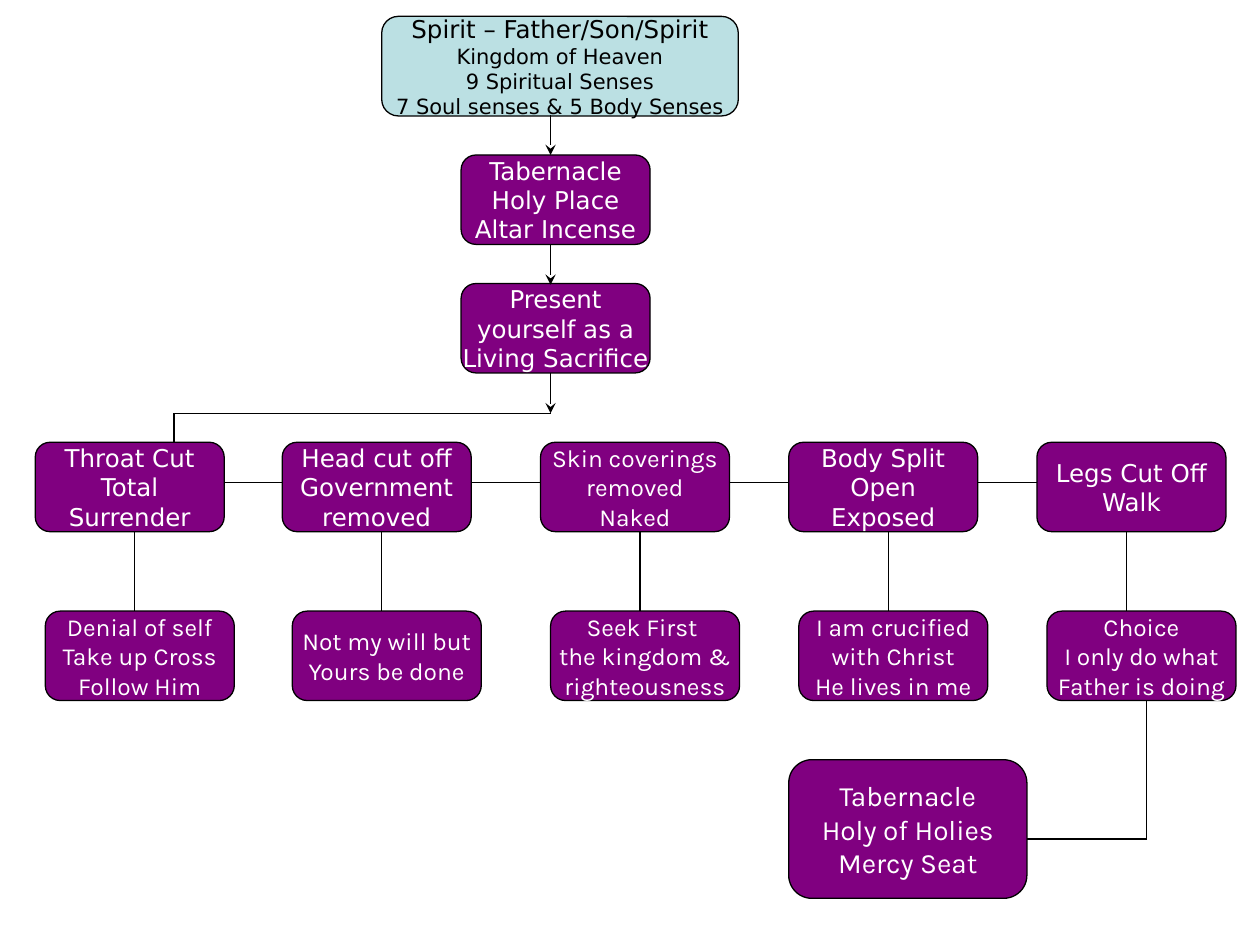
from dataclasses import dataclass
from itertools import pairwise

from lxml import etree
from pptx import Presentation
from pptx.dml.color import RGBColor
from pptx.enum.shapes import MSO_CONNECTOR, MSO_SHAPE
from pptx.enum.text import MSO_ANCHOR, PP_ALIGN
from pptx.oxml.ns import qn
from pptx.slide import Slide
from pptx.util import Inches, Pt

ROUNDED = MSO_SHAPE.FLOWCHART_ALTERNATE_PROCESS
STRAIGHT = MSO_CONNECTOR.STRAIGHT
MIDDLE = MSO_ANCHOR.MIDDLE
CENTER = PP_ALIGN.CENTER

SANS = "DejaVu Sans"
KARLA = "Karla"
BOX_WIDTH = 1.5
BOX_HEIGHT = 0.71
TRUNK_X = 4.37
BRANCH_Y = 3.28
STEP_TOP = 3.51
LINK_Y = 3.83
MEANING_TOP = 4.85
MEANING_SHIFT = 0.08

COLUMNS = [
    (0.28, 0.79, SANS, "Throat Cut\nTotal\nSurrender",
     "Denial of self\nTake up Cross\nFollow Him"),
    (2.24, 0.79, SANS, "Head cut off\nGovernment\nremoved",
     "Not my will but\nYours be done"),
    (4.29, 0.79, KARLA, "Skin coverings\nremoved\nNaked",
     "Seek First \nthe kingdom &\nrighteousness"),
    (6.26, 0.79, SANS, "Body Split\nOpen\nExposed",
     "I am crucified\nwith Christ\nHe lives in me"),
    (8.23, 0.71, SANS, "Legs Cut Off\nWalk",
     "Choice\nI only do what\nFather is doing"),
]


def color(value):
    return RGBColor.from_string(value)


@dataclass
class FlowChart:
    page: Slide
    fill: str = "800080"
    ink: str = "FFFFFF"
    stroke: str = "000000"
    weight: float = 0.75

    def outline(self, line):
        line.color.rgb = color(self.stroke)
        line.width = Pt(self.weight)

    def box(self, left, top, paragraphs, font=KARLA, width=BOX_WIDTH,
            height=BOX_HEIGHT, fill=None, ink=None):
        box = self.page.shapes.add_shape(
            ROUNDED, Inches(left), Inches(top), Inches(width), Inches(height))
        box.shadow.inherit = False
        box.fill.solid()
        box.fill.fore_color.rgb = color(fill or self.fill)
        self.outline(box.line)
        frame = box.text_frame
        frame.word_wrap = False
        frame.vertical_anchor = MIDDLE
        for index, (text, size) in enumerate(paragraphs):
            para = frame.add_paragraph() if index else frame.paragraphs[0]
            para.text = text
            para.alignment = CENTER
            for span in para.runs:
                span.font.name = font
                span.font.size = Pt(size)
                span.font.color.rgb = color(ink or self.ink)
            for line_break in para._p.findall(qn("a:br")):
                etree.SubElement(line_break, qn("a:rPr"), sz=str(size * 100))

    def line(self, start, end, arrow=False):
        line = self.page.shapes.add_connector(
            STRAIGHT, *(Inches(value) for value in (*start, *end)))
        self.outline(line.line)
        properties = line._element.spPr
        if arrow:
            etree.SubElement(properties.find(qn("a:ln")), qn("a:tailEnd"),
                             type="stealth")
        etree.SubElement(properties, qn("a:effectLst"))


def main():
    deck = Presentation()
    deck.slide_width = Inches(10)
    deck.slide_height = Inches(7.5)
    chart = FlowChart(deck.slides.add_slide(deck.slide_layouts[6]))

    chart.box(3.03, 0.13, [
        ("Spirit – Father/Son/Spirit", 14),
        ("Kingdom of Heaven", 12),
        ("9 Spiritual Senses\n7 Soul senses & 5 Body Senses", 12),
    ], SANS, 2.83, 0.79, "BBE0E3", "000000")
    chart.box(3.66, 1.23, [("Tabernacle\nHoly Place\nAltar Incense", 14)], SANS)
    chart.box(3.66, 2.25,
              [("Present\nyourself as a\nLiving Sacrifice", 14)], SANS)
    for top in (0.91, 1.94, 2.96):
        chart.line((TRUNK_X, top), (TRUNK_X, top + 0.32), arrow=True)

    chart.line((1.38, STEP_TOP), (1.38, BRANCH_Y))
    chart.line((1.38, BRANCH_Y), (TRUNK_X, BRANCH_Y))

    for left, stem, font, step, meaning in COLUMNS:
        chart.box(left, STEP_TOP, [(step, 14)], font)
        chart.box(left + MEANING_SHIFT, MEANING_TOP, [(meaning, 14)])
        chart.line((left + stem, STEP_TOP + BOX_HEIGHT),
                   (left + stem, MEANING_TOP))
    for (left, *_), (following, *_) in pairwise(COLUMNS):
        chart.line((left + BOX_WIDTH, LINK_Y), (following, LINK_Y))

    chart.box(6.26, 6.03, [("Tabernacle\nHoly of Holies\nMercy Seat", 16)],
              width=1.89, height=1.1)
    chart.line((9.1, MEANING_TOP + BOX_HEIGHT), (9.1, 6.66))
    chart.line((9.1, 6.66), (8.15, 6.66))

    deck.save("out.pptx")


if __name__ == "__main__":
    main()
